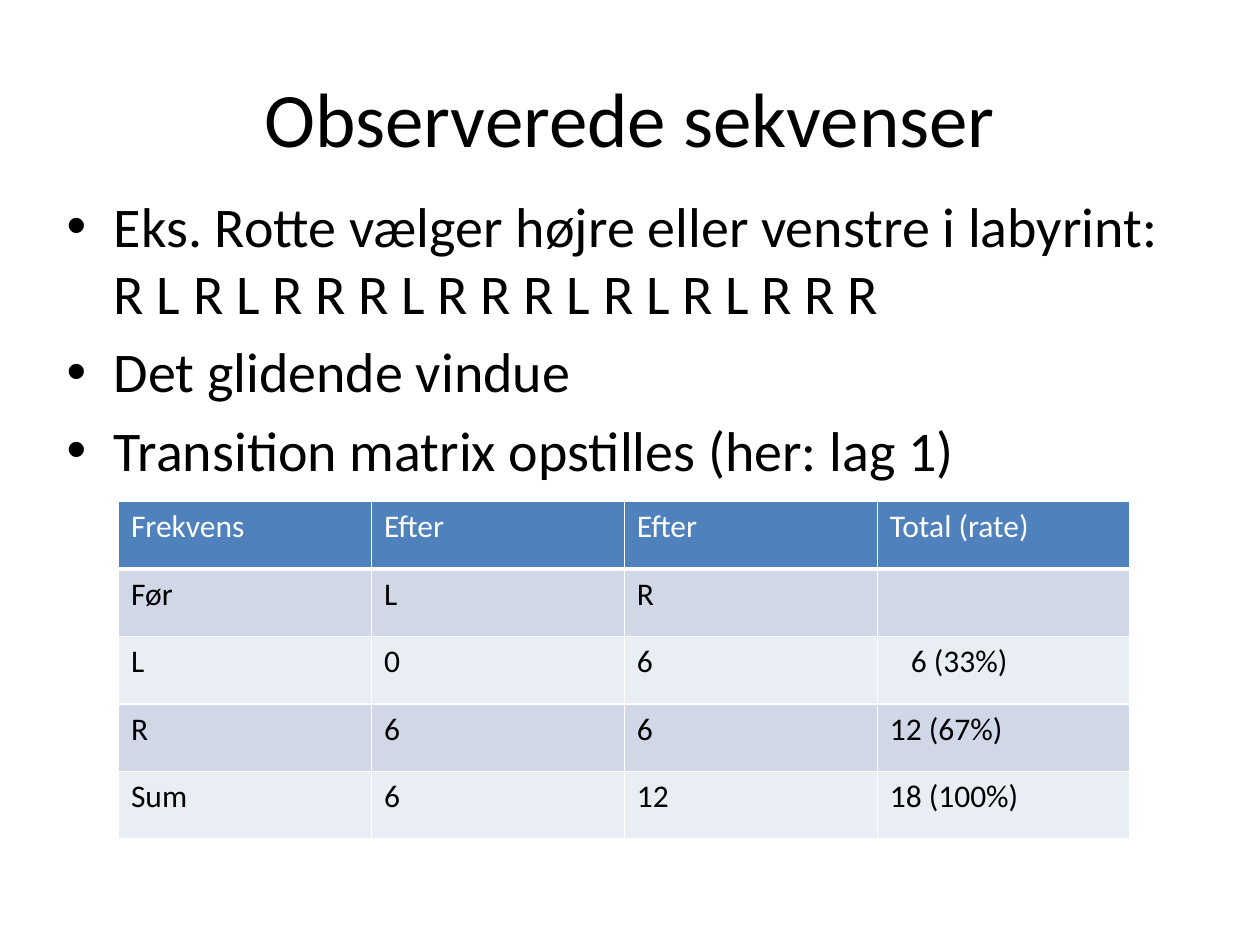
from lxml import etree
from pptx import Presentation
from pptx.dml.color import RGBColor
from pptx.enum.text import MSO_ANCHOR, PP_ALIGN
from pptx.oxml.ns import qn
from pptx.util import Pt

CENTER, LEFT = PP_ALIGN.CENTER, PP_ALIGN.LEFT
MIDDLE, TOP = MSO_ANCHOR.MIDDLE, MSO_ANCHOR.TOP
FONT = "Calibri"
COLORS = {
    "text": "000000",
    "white": "FFFFFF",
    "header": "4F81BD",
    "dark_band": "D0D8E8",
    "light_band": "E9EDF4",
}
TITLE = "Observerede sekvenser"
BULLETS = [
    "Eks. Rotte vælger højre eller venstre i labyrint: "
    "R L R L R R R L R R R L R L R L R R R",
    "Det glidende vindue",
    "Transition matrix opstilles (her: lag 1)",
]
TRANSITIONS = [
    ["Frekvens", "Efter", "Efter", "Total (rate)"],
    ["Før", "L", "R", ""],
    ["L", "0", "6", "6 (33%)"],
    ["R", "6", "6", "12 (67%)"],
    ["Sum", "6", "12", "18 (100%)"],
]
INDENTED_CELL = (2, 3)


def set_attributes(target, values):
    """Set each named attribute of the target."""
    for name, value in values.items():
        setattr(target, name, value)


def write_text(paragraph, text, size, color):
    """Add one formatted run to a paragraph."""
    run = paragraph.add_run()
    run.text = text
    set_attributes(run.font, {"name": FONT, "size": Pt(size)})
    run.font.color.rgb = RGBColor.from_string(COLORS[color])


def add_text_frame(slide, box, anchor):
    """Add a wrapping text box and return its frame."""
    frame = slide.shapes.add_textbox(*map(Pt, box)).text_frame
    set_attributes(frame, {"word_wrap": True, "vertical_anchor": anchor})
    return frame


def add_title(slide, box):
    """Add the centred slide title."""
    paragraph = add_text_frame(slide, box, MIDDLE).paragraphs[0]
    paragraph.alignment = CENTER
    write_text(paragraph, TITLE, 44, "text")


def add_bullets(slide, box):
    """Add the bulleted list with hanging indents."""
    frame = add_text_frame(slide, box, TOP)
    for index, text in enumerate(BULLETS):
        paragraph = frame.add_paragraph() if index else frame.paragraphs[0]
        set_attributes(paragraph, {"alignment": LEFT, "space_before": Pt(6.4)})
        properties = paragraph._p.get_or_add_pPr()
        properties.set("marL", str(Pt(27)))
        properties.set("indent", str(Pt(-27)))
        etree.SubElement(properties, qn("a:buFont"), typeface="Arial")
        etree.SubElement(properties, qn("a:buChar"), char="•")
        write_text(paragraph, text, 32, "text")


def add_borders(cell, bottom_width):
    """Draw white borders around a table cell."""
    properties = cell._tc.get_or_add_tcPr()
    for side, width in zip("LRTB", (1, 1, 1, bottom_width)):
        line = etree.SubElement(properties, qn(f"a:ln{side}"), w=str(Pt(width)))
        fill = etree.SubElement(line, qn("a:solidFill"))
        etree.SubElement(fill, qn("a:srgbClr"), val=COLORS["white"])


def add_transition_table(slide, box):
    """Add the banded transition matrix."""
    row_count, column_count = len(TRANSITIONS), len(TRANSITIONS[0])
    table = slide.shapes.add_table(row_count, column_count, *map(Pt, box)).table
    for row_index, row in enumerate(TRANSITIONS):
        is_header = row_index == 0
        band = "dark_band" if row_index % 2 else "light_band"
        for column_index, text in enumerate(row):
            cell = table.cell(row_index, column_index)
            add_borders(cell, 3 if is_header else 1)
            cell.fill.solid()
            cell.fill.fore_color.rgb = RGBColor.from_string(
                COLORS["header" if is_header else band])
            paragraph = cell.text_frame.paragraphs[0]
            if (row_index, column_index) == INDENTED_CELL:
                paragraph._p.get_or_add_pPr().set("marL", str(Pt(12)))
            if text:
                write_text(paragraph, text, 18, "white" if is_header else "text")
                paragraph.runs[0].font.bold = False


def main():
    """Build and save the slide."""
    presentation = Presentation()
    set_attributes(presentation, {"slide_width": Pt(720), "slide_height": Pt(540)})
    slide = presentation.slides.add_slide(presentation.slide_layouts[6])
    add_title(slide, (36, 21.6, 648, 90))
    add_bullets(slide, (31, 105.8, 648, 356.4))
    add_transition_table(slide, (67.7, 286.6, 578.2, 193))
    presentation.save("out.pptx")


if __name__ == "__main__":
    main()
